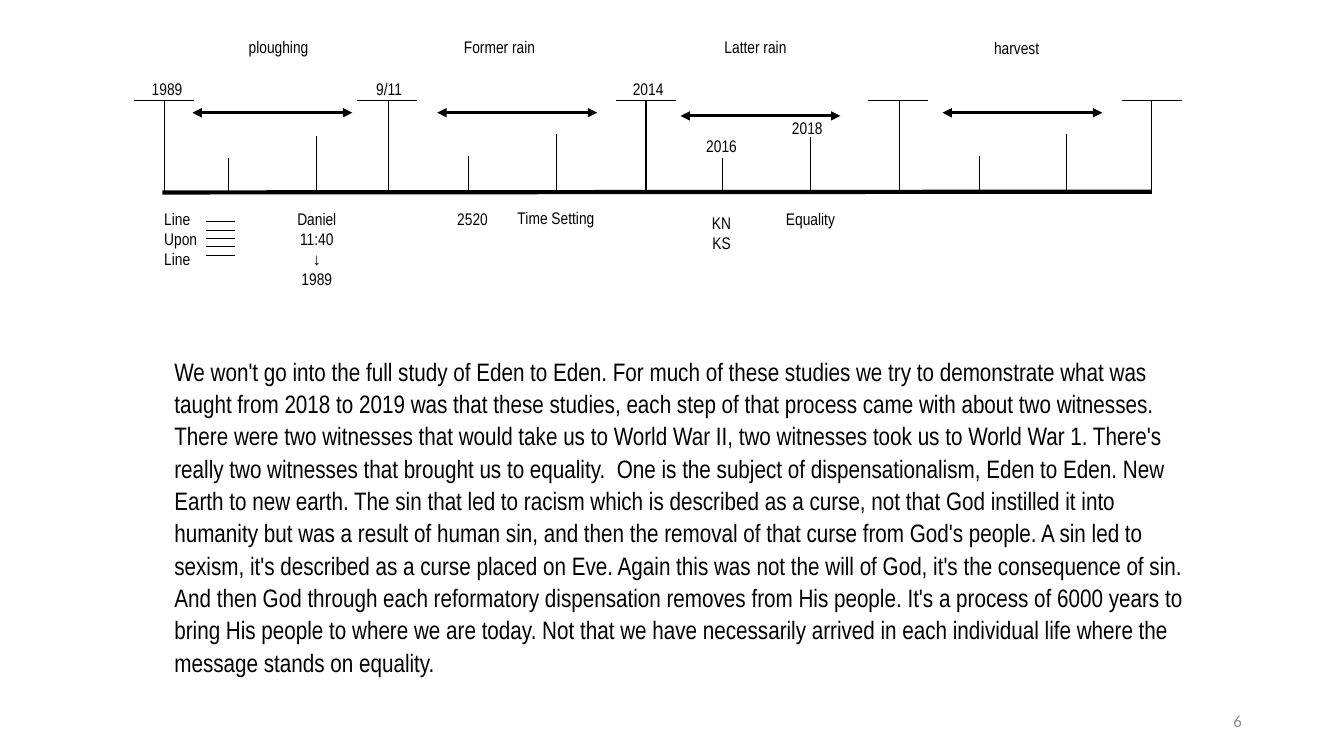
from lxml.etree import SubElement
from pptx import Presentation
from pptx.dml.color import RGBColor
from pptx.enum.shapes import MSO_CONNECTOR as Connector
from pptx.enum.text import MSO_ANCHOR as Anchor, MSO_AUTO_SIZE as AutoSize, PP_ALIGN as Align
from pptx.oxml.ns import qn
from pptx.util import Cm, Pt

BLACK, GREY = "000000", "8C8C8C"
FONT = "Arial Narrow"

# Timeline geometry, in cm
CAP_TOP, CAP_WIDTH, BASELINE = 2.54, 1.52, 4.84
ARROW_LENGTH, LINE_STEP, RUNG_STEP = 4.03, 0.51, 0.21

# Main waymarks: stem position, left end of the cap
WAYMARKS = [(4.14, 3.38), (9.8, 8.99), (16.28, 15.52), (22.68, 21.87), (29.03, 28.27)]

# Short ticks: position, top
TICKS = [(5.77, 3.99), (7.98, 3.43), (11.81, 3.94), (14.02, 3.38),
         (18.21, 3.99), (20.42, 3.45), (24.69, 3.94), (26.87, 3.38)]

# Period arrows: left end, height
PERIODS = [(4.85, 2.84), (11.02, 2.84), (17.15, 2.92), (23.75, 2.84)]

# Centred labels: left, top, width, lines
LABELS = [
    (5.28, 0.81, 3.48, ["ploughing"]),
    (10.85, 0.81, 3.48, ["Former rain"]),
    (17.3, 0.81, 3.48, ["Latter rain"]),
    (23.88, 0.83, 3.48, ["harvest"]),
    (3.56, 1.85, 1.3, ["1989"]),
    (8.89, 1.85, 1.83, ["9/11"]),
    (15.42, 1.85, 1.83, ["2014"]),
    (17.27, 3.3, 1.83, ["2016"]),
    (19.43, 2.84, 1.83, ["2018"]),
    (7.21, 5.13, 1.55, ["Daniel", "11:40", "↓", "1989"]),
    (10.92, 5.13, 1.98, ["2520"]),
    (12.27, 5.11, 3.48, ["Time Setting"]),
    (17.17, 5.23, 2.03, ["KN", "KS"]),
    (19.41, 5.13, 2.03, ["Equality"]),
]

# Sentences of the study paragraph
STUDY = [
    "We won't go into the full study of Eden to Eden.",
    "For much of these studies we try to demonstrate what was taught from 2018 to 2019 was that "
    "these studies, each step of that process came with about two witnesses.",
    "There were two witnesses that would take us to World War II, two witnesses took us to "
    "World War 1.",
    "There's really two witnesses that brought us to equality. ",
    "One is the subject of dispensationalism, Eden to Eden.",
    "New Earth to new earth.",
    "The sin that led to racism which is described as a curse, not that God instilled it into "
    "humanity but was a result of human sin, and then the removal of that curse from God's people.",
    "A sin led to sexism, it's described as a curse placed on Eve.",
    "Again this was not the will of God, it's the consequence of sin.",
    "And then God through each reformatory dispensation removes from His people.",
    "It's a process of 6000 years to bring His people to where we are today.",
    "Not that we have necessarily arrived in each individual life where the message stands on "
    "equality.",
]


def colour(value):
    return RGBColor.from_string(value)


def apply(target, values):
    for name, value in values.items():
        setattr(target, name, value)


def write(frame, lines, align=Align.LEFT, size=12, font=FONT, hue=BLACK, **para_format):
    for index, line in enumerate(lines):
        para = frame.add_paragraph() if index else frame.paragraphs[0]
        apply(para, {"alignment": align, **para_format})
        span = para.add_run()
        span.text = line
        apply(span.font, {"name": font, "size": Pt(size)})
        span.font.color.rgb = colour(hue)


def add_label(page, left, top, width, lines, align=Align.CENTER):
    height = 0.76 + LINE_STEP * (len(lines) - 1)
    box = page.shapes.add_textbox(Cm(left), Cm(top), Cm(width), Cm(height))
    apply(box.text_frame, {"word_wrap": True, "auto_size": AutoSize.SHAPE_TO_FIT_TEXT})
    write(box.text_frame, lines, align)


def add_line(page, x1, y1, x2, y2, weight=0.75, arrows=False):
    line = page.shapes.add_connector(Connector.STRAIGHT, Cm(x1), Cm(y1), Cm(x2), Cm(y2))
    line.line.color.rgb = colour(BLACK)
    line.line.width = Pt(weight)
    if arrows:
        outline = line.line._get_or_add_ln()
        for end in ("a:headEnd", "a:tailEnd"):
            SubElement(outline, qn(end), type="triangle")
    SubElement(line._element.spPr, qn("a:effectLst"))


def add_timeline(page):
    add_line(page, 4.09, 4.85, 29.03, 4.83, weight=3)
    for stem, cap in WAYMARKS:
        add_line(page, stem, CAP_TOP, stem, BASELINE)
        add_line(page, cap, CAP_TOP, cap + CAP_WIDTH, CAP_TOP)
    for x, top in TICKS:
        add_line(page, x, top, x, BASELINE)
    for left, y in PERIODS:
        add_line(page, left, y, left + ARROW_LENGTH, y, weight=2.25, arrows=True)


def add_line_upon_line(page):
    add_label(page, 3.89, 5.13, 2.39, ["Line", "Upon", "Line"], Align.LEFT)
    for rung in range(5):
        y = 5.59 + rung * RUNG_STEP
        add_line(page, 5.18, y, 5.92, y)


def fill_body(page):
    body = page.placeholders[1]
    apply(body, {"left": Cm(4.14), "top": Cm(8.79), "width": Cm(26.29), "height": Cm(8.46)})
    frame = body.text_frame
    apply(frame, {"word_wrap": True, "auto_size": AutoSize.SHAPE_TO_FIT_TEXT,
                  "vertical_anchor": Anchor.TOP})
    write(frame, [" ".join(STUDY)], size=18, line_spacing=1.07, space_before=Pt(0))
    # Plain paragraph: no bullet, no hanging indent
    properties = frame.paragraphs[0]._p.get_or_add_pPr()
    properties.set("marL", "0")
    properties.set("indent", "0")
    SubElement(properties, qn("a:buNone"))


def add_page_number(page):
    box = page.shapes.add_textbox(Cm(23.93), Cm(17.65), Cm(7.62), Cm(1.02))
    apply(box.text_frame, {"word_wrap": True, "vertical_anchor": Anchor.MIDDLE})
    write(box.text_frame, ["6"], Align.RIGHT, font="Calibri", hue=GREY)


def main():
    deck = Presentation()
    apply(deck, {"slide_width": Cm(33.87), "slide_height": Cm(19.05)})
    page = deck.slides.add_slide(deck.slide_layouts[1])

    # The page has no title
    title = page.shapes.title._element
    title.getparent().remove(title)

    # Timeline with its labels
    add_timeline(page)
    for label in LABELS:
        add_label(page, *label)
    add_line_upon_line(page)

    # Study text and page number
    fill_body(page)
    add_page_number(page)
    deck.save("out.pptx")


if __name__ == "__main__":
    main()
